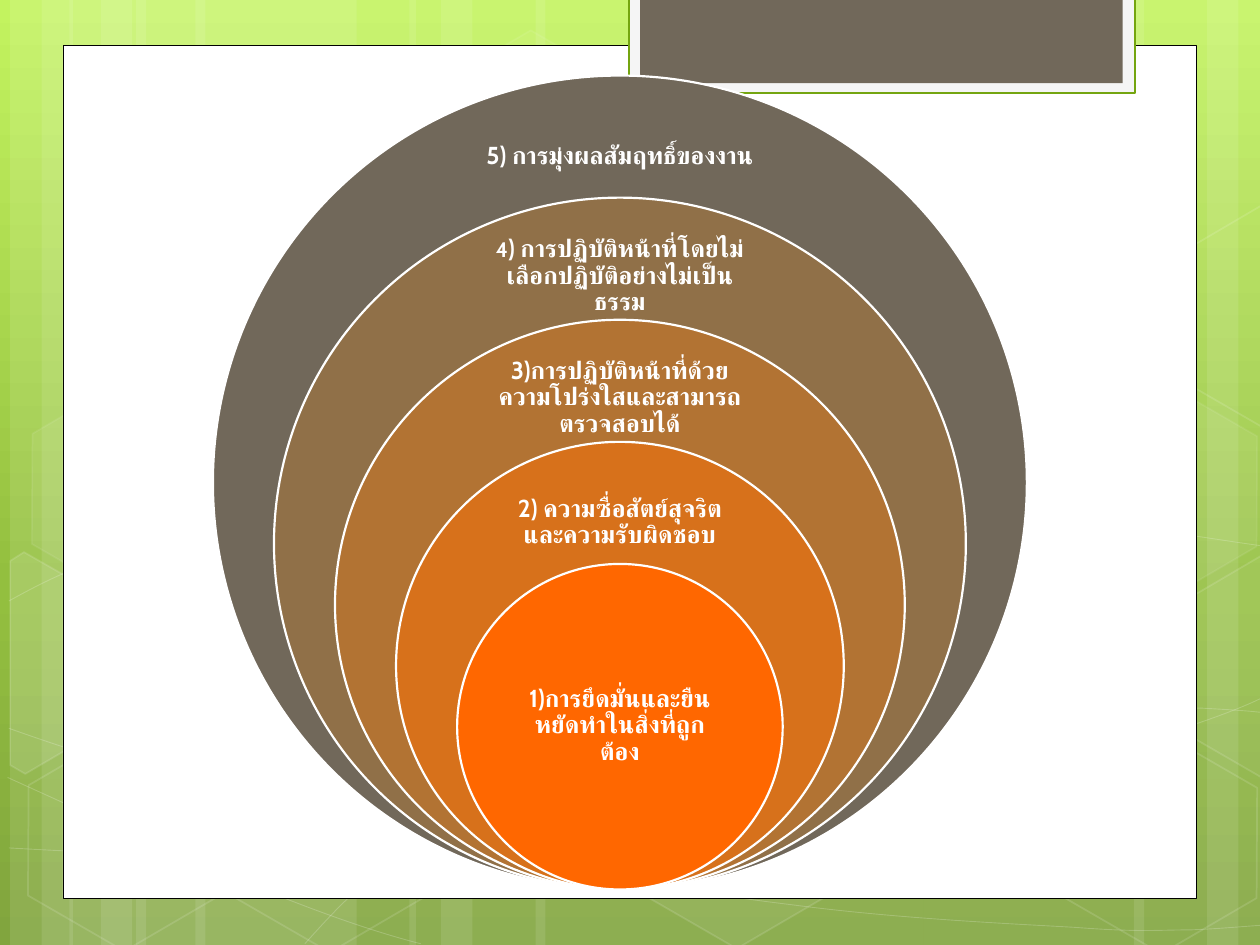
from copy import deepcopy
from dataclasses import dataclass
from math import cos, radians, sin

from lxml import etree
from pptx import Presentation
from pptx.dml.color import RGBColor
from pptx.enum.shapes import MSO_SHAPE
from pptx.enum.text import MSO_ANCHOR, PP_ALIGN
from pptx.oxml.ns import qn
from pptx.util import Inches, Pt

RECTANGLE, ELLIPSE, HEXAGON = MSO_SHAPE.RECTANGLE, MSO_SHAPE.OVAL, MSO_SHAPE.HEXAGON
MIDDLE, CENTER = MSO_ANCHOR.MIDDLE, PP_ALIGN.CENTER

COLUMNS, ROWS = 10, 7.5
CELL = Inches(1)
TILT = 30


@dataclass(frozen=True)
class Theme:
    font: str = "Cabin"
    text_size: int = 14
    small_size: int = 12
    white: str = "FFFFFF"
    black: str = "000000"
    tab_frame: str = "F5F5F5"
    tab_line: str = "74A510"
    tab: str = "71685A"
    rings: tuple = ("71685A", "907048", "B27333", "D7711B", "FF6700")
    background: tuple = ((0, "C3F35F"), (0.62, "93BF3F"), (1, "81A53E"))


THEME = Theme()

# left column, width
STRIPES = [(1.08, 1.75), (0.08, 0.5), (0.33, 0.83), (1.55, 1.75), (0.55, 0.5), (0.8, 0.83),
           (7.33, 1.75), (9.58, 0.5), (9, 0.83), (4.25, 3.08), (3.25, 0.5), (3.5, 0.83)]

# start point, then segments: six numbers for a Bezier curve, two for a straight line
CURVES = [
    [(0.07, 6.73), (0.61, 6.76, 1.15, 6.79, 1.9, 6.78), (2.65, 6.77, 3.58, 6.75, 4.58, 6.65),
     (5.58, 6.55, 7, 6.36, 7.92, 6.17), (8.83, 5.98, 9.77, 5.68, 10.07, 5.51)],
    [(0.07, 4.77), (0.36, 4.61, 0.65, 4.46, 1.21, 4.31), (1.78, 4.16, 2.59, 3.94, 3.47, 3.87),
     (4.36, 3.8, 5.44, 3.79, 6.54, 3.87), (7.64, 3.95, 9.47, 4.26, 10.07, 4.34)],
    [(0.06, 6.17), (1.27, 6.72, 2.47, 7.27, 3.34, 7.49)],
    [(0.07, 5.78), (0.38, 5.89, 0.7, 6, 1.28, 6.16), (1.86, 6.31, 2.73, 6.56, 3.57, 6.73),
     (4.4, 6.9, 5.45, 7.08, 6.28, 7.18), (7.11, 7.29, 8, 7.33, 8.53, 7.36),
     (9.05, 7.4, 9.19, 7.38, 9.45, 7.38), (9.71, 7.37, 9.89, 7.35, 10.07, 7.34)],
    [(2.42, 7.49), (2.6, 7.29, 2.78, 7.09, 3.02, 6.91), (3.26, 6.73, 3.6, 6.53, 3.88, 6.39),
     (4.16, 6.25, 4.33, 6.19, 4.7, 6.09), (5.06, 5.99, 5.73, 5.85, 6.08, 5.78),
     (6.44, 5.71, 6.49, 5.71, 6.8, 5.69), (7.11, 5.66, 7.6, 5.63, 7.94, 5.62),
     (8.29, 5.61, 8.86, 5.62, 8.86, 5.62), (9.53, 5.62),
     (9.71, 5.63, 9.88, 5.64, 9.97, 5.65), (10.06, 5.66, 10.03, 5.65, 10.06, 5.66)],
]

# left column, top row, fill opacity (None for outline only), line opacity
HEXAGONS = [(3.34, 0.36, 4, 8), (4.97, 5.89, 6, 12), (0.11, 5.91, None, 12), (0.14, 3.12, 7, 8),
            (1.74, 5.92, None, 12), (7.53, 4.53, 10, 12), (8.34, 5.93, None, 12),
            (8.34, 3.14, 7, 8)]

# centre, corner points as they lie on the slide, fill opacity
CUT_HEXAGONS = [
    ((0.36, 5.35),
     [(0.08, 4.45), (0.19, 4.38), (0.96, 4.82), (0.95, 5.7), (0.2, 6.14), (0.08, 6.07)], 10),
    ((9.85, 5.2),
     [(9.26, 4.85), (10.01, 4.41), (10.09, 4.46), (10.09, 6.13), (10.02, 6.17), (9.26, 5.73)], 4),
    ((9.85, 2.41),
     [(9.26, 2.07), (10.01, 1.63), (10.1, 1.68), (10.09, 3.35), (10.02, 3.39), (9.26, 2.95)], None),
]

# text runs, label offset from ring top, label width, label height, inset
RINGS = [
    ([("5) การมุ่งผลสัมฤทธิ์ของงาน", THEME.text_size)], 0.32, 2.42, 0.65, 0.11),
    ([("4", THEME.small_size),
      (") การปฏิบัติหน้าที่โดยไม่เลือกปฏิบัติอย่างไม่เป็นธรรม", THEME.text_size)],
     0.31, 2.37, 0.63, 0.09),
    ([("3)การปฏิบัติหน้าที่ด้วยความโปร่งใสและสามารถตรวจสอบได้", THEME.text_size)],
     0.31, 2.34, 0.62, 0.11),
    ([("2) ความซื่อสัตย์สุจริตและความรับผิดชอบ", THEME.text_size)], 0.32, 1.92, 0.64, 0.11),
    ([("1)การยึดมั่นและยืนหยัดทำในสิ่งที่ถูกต้อง", THEME.text_size)], 0.64, 1.83, 1.29, 0.11),
]
RING_CENTER, RING_TOP, RING_SIZE, RING_SHARE = 4.92, 0.6, 6.46, 0.15


def grid(*lengths):
    return [round(length * CELL) for length in lengths]


def set_values(target, values):
    for name, value in values.items():
        setattr(target, name, value)


def paint(fill, color, parent, opacity=None):
    """Fill with a solid colour; parent is the XML element that holds the fill."""
    if color is None:
        fill.background()
        return
    fill.solid()
    fill.fore_color.rgb = RGBColor.from_string(color)
    if opacity is not None:
        color_element = parent.find(f"{qn('a:solidFill')}/{qn('a:srgbClr')}")
        etree.SubElement(color_element, qn("a:alpha")).set("val", str(opacity * 1000))


def style(shape, fill=None, opacity=None, line=None, width=1, line_opacity=None):
    shape.shadow.inherit = False
    properties = shape.element.spPr
    paint(shape.fill, fill, properties, opacity)
    shape.line.width = Pt(width)
    paint(shape.line.fill, line, properties.find(qn("a:ln")), line_opacity)


def add_preset(slide, kind, box, **look):
    shape = slide.shapes.add_shape(kind, *grid(*box))
    style(shape, **look)
    return shape


def add_outline(slide, points, close, **look):
    start, *others = [grid(*point) for point in points]
    builder = slide.shapes.build_freeform(*start)
    builder.add_line_segments(others, close=close)
    shape = builder.convert_to_shape()
    style(shape, **look)
    return shape


def add_curve(slide, curve, **look):
    """Lay out all points as lines, then join each Bezier triple into one segment."""
    points = [pair for segment in curve for pair in zip(segment[::2], segment[1::2])]
    shape = add_outline(slide, points, False, **look)
    steps = iter(list(shape.element.iter(qn("a:lnTo"))))
    for segment in curve[1:]:
        first, *rest = [next(steps) for _ in segment[::2]]
        if rest:
            first.tag = qn("a:cubicBezTo")
            for step in rest:
                first.append(step[0])
                step.getparent().remove(step)


def turn_back(point, center):
    """Where a point lies before its shape is tilted about the centre."""
    x, y = point[0] - center[0], point[1] - center[1]
    cosine, sine = cos(radians(TILT)), sin(radians(TILT))
    return center[0] + x * cosine + y * sine, center[1] - x * sine + y * cosine


def add_label(slide, runs, box, inset):
    frame = slide.shapes.add_textbox(*grid(*box)).text_frame
    margins = {f"margin_{side}": Inches(inset) for side in ("left", "top", "right", "bottom")}
    set_values(frame, {"word_wrap": True, "vertical_anchor": MIDDLE, **margins})
    paragraph = frame.paragraphs[0]
    set_values(paragraph, {"alignment": CENTER, "line_spacing": 0.9})
    for text, size in runs:
        run = paragraph.add_run()
        run.text = text
        set_values(run.font, {"name": THEME.font, "size": Pt(size), "bold": True})
        run.font.color.rgb = RGBColor.from_string(THEME.white)
        complex_script = etree.SubElement(run.font._element, qn("a:cs"))
        complex_script.set("typeface", THEME.font)


def set_background(slide):
    fill = slide.background.fill
    fill.gradient()
    fill.gradient_angle = 270
    stop_list = slide.element.find(f".//{qn('a:gsLst')}")
    stop_list.append(deepcopy(stop_list[-1]))
    for stop, (position, color) in zip(fill.gradient_stops, THEME.background):
        stop.position = position
        stop.color.rgb = RGBColor.from_string(color)


def add_backdrop(slide):
    white = THEME.white
    for left, width in STRIPES:
        add_preset(slide, RECTANGLE, (left, 0, width, ROWS), fill=white, opacity=10)
    for curve in CURVES:
        add_curve(slide, curve, line=white, width=0.5, line_opacity=20)
    for left, top, opacity, line_opacity in HEXAGONS:
        hexagon = add_preset(slide, HEXAGON, (left, top, 1.75, 1.52), line=white,
                             fill=white if opacity else None, opacity=opacity,
                             line_opacity=line_opacity)
        hexagon.rotation = TILT
        hexagon.adjustments[0], hexagon.adjustments[1] = 0.285, 1.155
    for center, corners, opacity in CUT_HEXAGONS:
        points = [turn_back(corner, center) for corner in corners + corners[:1]]
        piece = add_outline(slide, points, True, fill=white if opacity else None,
                            opacity=opacity, line=white, line_opacity=12)
        piece.rotation = TILT


def add_panel(slide):
    add_preset(slide, RECTANGLE, (0.5, 0.36, 9, 6.77), fill=THEME.white, line=THEME.black, width=0.5)
    add_preset(slide, RECTANGLE, (4.99, -0.02, 4.02, 0.76), fill=THEME.tab_frame,
               line=THEME.tab_line, width=1.25)
    add_preset(slide, RECTANGLE, (5.08, -0.02, 3.83, 0.68), fill=THEME.tab)


def add_rings(slide):
    """Nested circles that share their lowest point."""
    for index, (runs, offset, width, height, inset) in enumerate(RINGS):
        step = index * RING_SHARE * RING_SIZE
        size, top = RING_SIZE - step, RING_TOP + step
        add_preset(slide, ELLIPSE, (RING_CENTER - size / 2, top, size, size),
                   fill=THEME.rings[index], line=THEME.white, width=1.25)
        add_label(slide, runs, (RING_CENTER - width / 2, top + offset, width, height), inset)


def main():
    presentation = Presentation()
    presentation.slide_width, presentation.slide_height = grid(COLUMNS, ROWS)
    slide = presentation.slides.add_slide(presentation.slide_layouts[6])
    set_background(slide)
    add_backdrop(slide)
    add_panel(slide)
    add_rings(slide)
    presentation.save("out.pptx")


if __name__ == "__main__":
    main()
